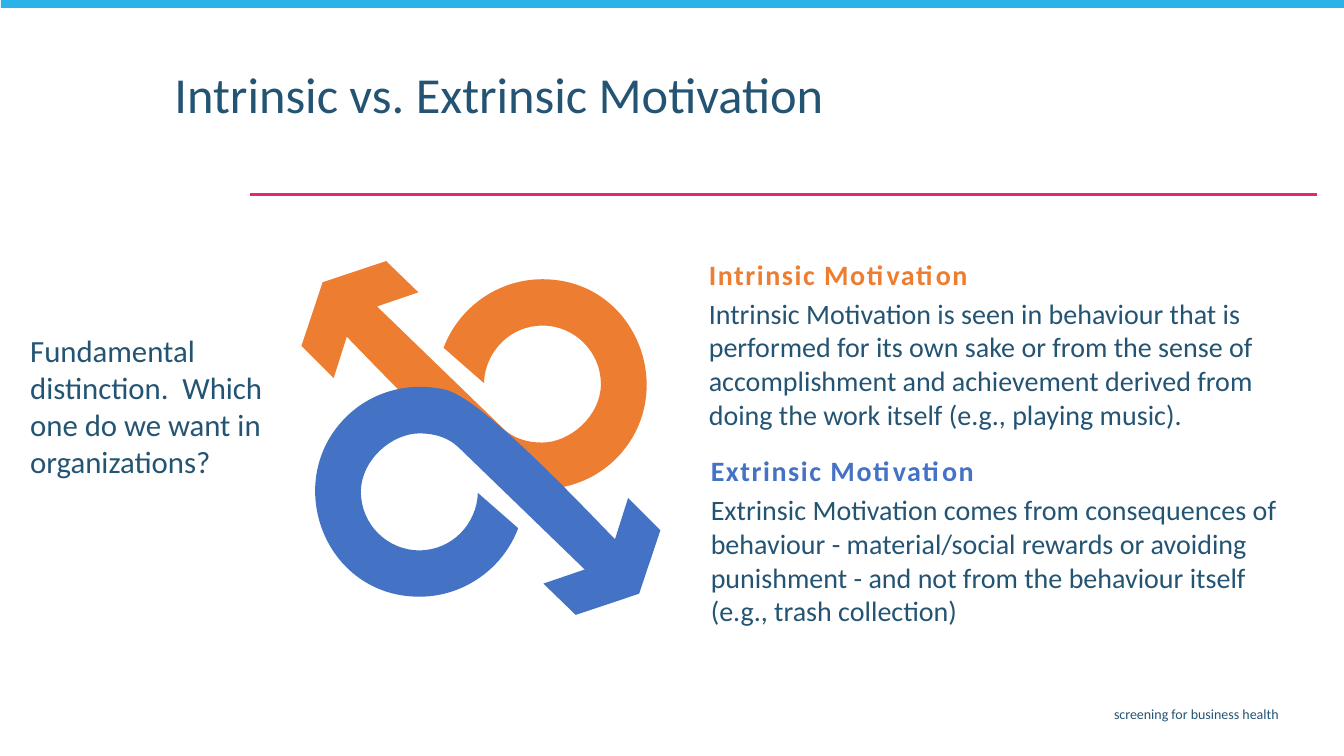
import pptx
import pptx.util
import pptx.dml.color
import pptx.enum.shapes
import pptx.enum.text
import pptx.oxml.ns
import lxml.etree

Inches = pptx.util.Inches
qn = pptx.oxml.ns.qn

THEME = {
    "font": "Calibri",
    "color": {"text": "245473", "bar": "29B3E8", "rule": "EC2179",
              "intrinsic": "ED7D31", "extrinsic": "4472C4"},
    "size": {"title": 36, "question": 22, "body": 20, "footer": 10},
}


def theme_color(role):
    return pptx.dml.color.RGBColor.from_string(THEME["color"][role])


def write(paragraph, text, size, color="text", bold=False):
    paragraph.text = text
    paragraph.font.name = THEME["font"]
    paragraph.font.size = pptx.util.Pt(THEME["size"][size])
    paragraph.font.color.rgb = theme_color(color)
    paragraph.font.bold = bold


deck = pptx.Presentation()
deck.slide_width, deck.slide_height = Inches(13.33), Inches(7.5)
slide = deck.slides.add_slide(deck.slide_layouts[5])

# Rule under the title
title_rule = slide.shapes.add_connector(
    pptx.enum.shapes.MSO_CONNECTOR.STRAIGHT,
    Inches(13.06), Inches(1.93), Inches(2.48), Inches(1.93))
title_rule.line.color.rgb = theme_color("rule")
title_rule.line.width = pptx.util.Pt(1.5)
lxml.etree.SubElement(title_rule._element.spPr, qn("a:effectLst"))

# Top bar
top_bar = slide.shapes.add_shape(
    pptx.enum.shapes.MSO_SHAPE.RECTANGLE,
    Inches(0.01), Inches(-0.02), Inches(13.34), Inches(0.1))
top_bar.shadow.inherit = False
top_bar.fill.solid()
top_bar.fill.fore_color.rgb = theme_color("bar")
top_bar.line.fill.background()

# Title
title = slide.shapes.title
title.left, title.top = Inches(1.63), Inches(0.64)
title.width, title.height = Inches(9.68), Inches(0.76)
title.text_frame.vertical_anchor = pptx.enum.text.MSO_ANCHOR.TOP
heading = title.text_frame.paragraphs[0]
write(heading, "Intrinsic vs. Extrinsic Motivation", "title")
heading.alignment = pptx.enum.text.PP_ALIGN.LEFT
heading.line_spacing = 0.9

# Looped arrows: one point is a straight edge, three points a Bezier curve
LOOP_START = (6.11, 4.55)
LOOP_EDGES = [
    [(5.85, 4.81), (5.47, 4.91), (5.11, 4.82)],
    [(4.75, 4.72), (3.8, 3.71), (3.44, 3.34)],
    [(3.31, 3.75)], [(2.99, 3.43)], [(3.2, 2.8)], [(3.83, 2.59)],
    [(4.15, 2.9)], [(3.74, 3.04)], [(5, 4.26)],
    [(5.09, 4.34), (5.21, 4.39), (5.38, 4.39)],
    [(5.65, 4.39), (5.96, 4.13), (5.96, 3.81)],
    [(5.96, 3.49), (5.7, 3.23), (5.38, 3.23)],
    [(5.06, 3.23), (4.81, 3.49), (4.8, 3.8)],
    [(4.4, 3.45)],
    [(4.55, 3.05), (4.94, 2.77), (5.38, 2.77)],
    [(6.32, 2.77), (6.75, 3.91), LOOP_START],
]
outline = [LOOP_START] + [point for edge in LOOP_EDGES for point in edge]

# The extrinsic arrow is the intrinsic one turned by half a circle
half_turn = [(9.54 - x, 8.69 - y) for x, y in outline]
for color, points in (("intrinsic", outline), ("extrinsic", half_turn)):
    corners = [(Inches(x), Inches(y)) for x, y in points]
    builder = slide.shapes.build_freeform(*corners[0])
    builder.add_line_segments(corners[1:], close=True)
    arrow = builder.convert_to_shape()
    arrow.shadow.inherit = False
    arrow.fill.solid()
    arrow.fill.fore_color.rgb = theme_color(color)
    arrow.line.fill.background()

    # Join each group of three points into one curve
    segments = iter(list(arrow._element.iter(qn("a:lnTo"))))
    for edge in LOOP_EDGES:
        group = [next(segments) for _ in edge]
        if len(group) == 3:
            curve = lxml.etree.Element(qn("a:cubicBezTo"))
            group[0].addprevious(curve)
            for segment in group:
                curve.append(segment[0])
                segment.getparent().remove(segment)

# Question on the left, definitions on the right
question = slide.shapes.add_textbox(
    Inches(0.21), Inches(2.34), Inches(2.83), Inches(3.1)).text_frame
question.word_wrap = True
question.margin_left = question.margin_right = Inches(0.09)
question.margin_top = Inches(0.95)
write(question.paragraphs[0],
      "Fundamental distinction.  Which one do we want in organizations?", "question")

DEFINITIONS = [
    ("Intrinsic Motivation", "intrinsic", 6.94, 2.51, 5.83,
     "Intrinsic Motivation is seen in behaviour that is performed for its own sake "
     "or from the sense of accomplishment and achievement derived from doing the "
     "work itself (e.g., playing music)."),
    ("Extrinsic Motivation", "extrinsic", 6.96, 4.46, 6.06,
     "Extrinsic Motivation comes from consequences of behaviour - material/social "
     "rewards or avoiding punishment - and not from the behaviour itself "
     "(e.g., trash collection)"),
]
for term, color, left, top, width, meaning in DEFINITIONS:
    definition = slide.shapes.add_textbox(
        Inches(left), Inches(top), Inches(width), Inches(1.84)).text_frame
    definition.word_wrap = True
    definition.margin_left = definition.margin_right = Inches(0.09)
    definition.margin_top = definition.margin_bottom = Inches(0.04)
    term_line = definition.paragraphs[0]
    write(term_line, term, "body", color, bold=True)
    term_line.runs[0]._r.get_or_add_rPr().set("spc", "110")
    meaning_line = definition.add_paragraph()
    write(meaning_line, meaning, "body")
    meaning_line.space_before = pptx.util.Pt(4)

# Footer
footer = slide.shapes.add_textbox(
    Inches(3.65), Inches(6.94), Inches(9.13), Inches(0.29)).text_frame
footer.word_wrap = True
footer.vertical_anchor = pptx.enum.text.MSO_ANCHOR.MIDDLE
write(footer.paragraphs[0], "screening for business health", "footer")
footer.paragraphs[0].alignment = pptx.enum.text.PP_ALIGN.RIGHT

deck.save("out.pptx")
